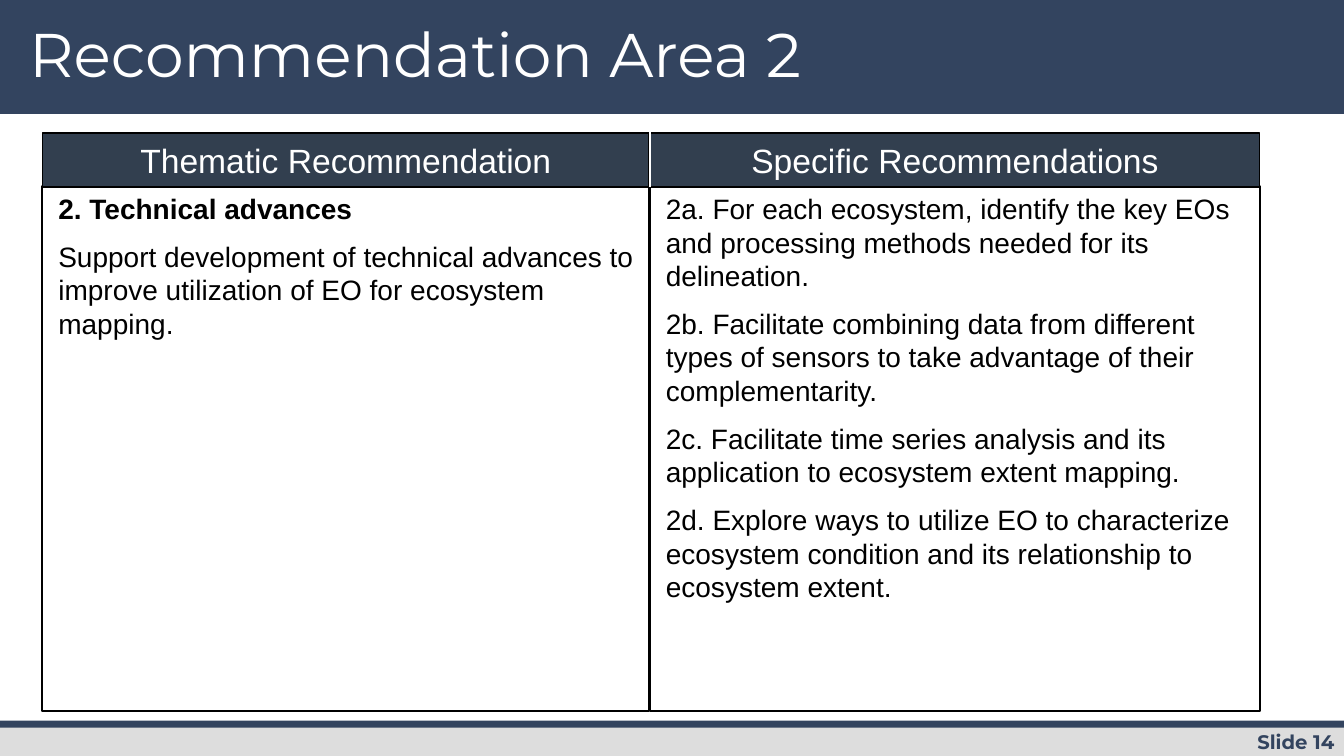
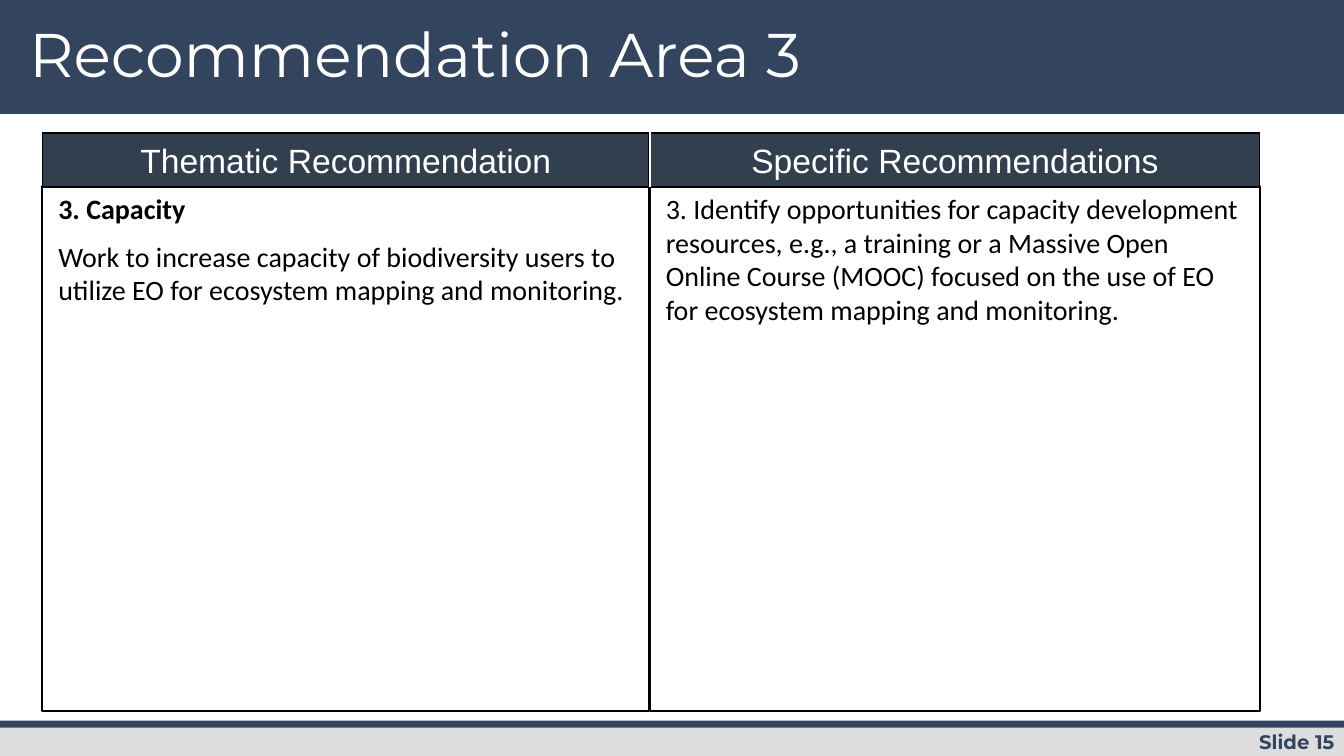
import pptx
import pptx.util
import pptx.dml.color
import pptx.enum.shapes
import pptx.enum.text
import pptx.oxml.ns
import lxml.etree

Cm = pptx.util.Cm
Pt = pptx.util.Pt
ALIGN = pptx.enum.text.PP_ALIGN
ANCHOR = pptx.enum.text.MSO_ANCHOR

COLORS = {
    "navy": "33445F",
    "header": "323F4F",
    "footer": "DDDDDD",
    "black": "000000",
    "white": "FFFFFF",
}
SLIDE_WIDTH = 33.87
HEADER_TOP, HEADER_HEIGHT = 3.35, 1.35
BODY_TOP, BODY_HEIGHT = HEADER_TOP + HEADER_HEIGHT, 13.21
COLUMNS = [
    ("Thematic Recommendation", 1.07, 15.29),
    ("Specific Recommendations", 16.38, 15.37),
]
BANDS = [
    (0, 2.87, "navy"),
    (18.26, 0.79, "footer"),
    (18.16, 0.18, "navy"),
]
AREAS = [
    {
        "title": "Recommendation Area 2",
        "number": "Slide 14",
        "font": "Arial",
        "columns": [
            [
                "2. Technical advances",
                "Support development of technical advances to improve utilization of EO for ecosystem mapping.",
            ],
            [
                "2a. For each ecosystem, identify the key EOs and processing methods needed for its delineation.",
                "2b. Facilitate combining data from different types of sensors to take advantage of their complementarity.",
                "2c. Facilitate time series analysis and its application to ecosystem extent mapping.",
                "2d. Explore ways to utilize EO to characterize ecosystem condition and its relationship to ecosystem extent.",
            ],
        ],
    },
    {
        "title": "Recommendation Area 3",
        "number": "Slide 15",
        "font": "Calibri",
        "columns": [
            [
                "3. Capacity",
                "Work to increase capacity of biodiversity users to utilize EO for ecosystem mapping and monitoring.",
            ],
            [
                "3. Identify opportunities for capacity development resources, e.g., a training or a Massive Open Online Course (MOOC) focused on the use of EO for ecosystem mapping and monitoring.",
            ],
        ],
    },
]


def add_rectangle(slide, left, top, width, height, fill=None, line_width=None):
    shape = slide.shapes.add_shape(
        pptx.enum.shapes.MSO_SHAPE.RECTANGLE, Cm(left), Cm(top), Cm(width), Cm(height)
    )
    shape.shadow.inherit = False
    if fill:
        shape.fill.solid()
        shape.fill.fore_color.rgb = pptx.dml.color.RGBColor.from_string(COLORS[fill])
    else:
        shape.fill.background()
    if line_width:
        shape.line.color.rgb = pptx.dml.color.RGBColor.from_string(COLORS["black"])
        shape.line.width = Pt(line_width)
    else:
        shape.line.fill.background()
    return shape


def format_paragraph(paragraph, font, size, color, alignment, bold=False):
    paragraph.alignment = alignment
    paragraph.font.name = font
    paragraph.font.size = Pt(size)
    paragraph.font.bold = bold
    paragraph.font.color.rgb = pptx.dml.color.RGBColor.from_string(COLORS[color])


presentation = pptx.Presentation()
presentation.slide_width = Cm(SLIDE_WIDTH)
presentation.slide_height = Cm(19.05)
layout = presentation.slide_layouts.get_by_name("Title Only")
slides = [presentation.slides.add_slide(layout) for area in AREAS]

layout_title = layout.placeholders[0]
layout_title.left, layout_title.top = Cm(0.48), Cm(0.48)
layout_title.width, layout_title.height = Cm(26.09), Cm(2.16)
layout_title.text_frame.vertical_anchor = ANCHOR.TOP
for top, height, fill in BANDS:
    band = add_rectangle(slides[0], 0, top, SLIDE_WIDTH, height, fill)
    layout_title.element.addprevious(band.element)

for slide, area in zip(slides, AREAS):
    title = slide.shapes.title
    title.text_frame.text = area["title"]
    paragraph = title.text_frame.paragraphs[0]
    paragraph.line_spacing = 0.9
    format_paragraph(paragraph, "Montserrat", 44, "white", ALIGN.LEFT)

    number = slide.shapes.add_textbox(Cm(28.52), Cm(18.26), Cm(5.36), Cm(0.86))
    number.text_frame.word_wrap = True
    number.text_frame.text = area["number"]
    format_paragraph(number.text_frame.paragraphs[0], "Montserrat", 14, "navy", ALIGN.RIGHT, True)

    for column, (heading, left, width) in enumerate(COLUMNS):
        body = add_rectangle(slide, left, BODY_TOP, width, BODY_HEIGHT, line_width=1.5)
        frame = body.text_frame
        frame.vertical_anchor = ANCHOR.TOP
        for index, text in enumerate(area["columns"][column]):
            paragraph = frame.add_paragraph() if index else frame.paragraphs[0]
            paragraph.text = text
            paragraph.line_spacing = Pt(24)
            if index:
                paragraph.space_before = Pt(10)
            paragraph._p.get_or_add_pPr().set("marL", str(Cm(0.15)))
            is_theme = column == 0 and index == 0
            format_paragraph(paragraph, area["font"], 20, "black", ALIGN.LEFT, is_theme)

        header = add_rectangle(slide, left, HEADER_TOP, width, HEADER_HEIGHT, "header", 1)
        header.text_frame.vertical_anchor = ANCHOR.MIDDLE
        header.text_frame.text = heading
        format_paragraph(header.text_frame.paragraphs[0], "Arial", 24, "white", ALIGN.CENTER)

    divider_left = Cm(COLUMNS[1][1])
    divider = slide.shapes.add_connector(
        pptx.enum.shapes.MSO_CONNECTOR.STRAIGHT, divider_left, Cm(3.3), divider_left, Cm(BODY_TOP)
    )
    divider.line.color.rgb = pptx.dml.color.RGBColor.from_string(COLORS["white"])
    divider.line.width = Pt(1)
    lxml.etree.SubElement(divider._element.spPr, pptx.oxml.ns.qn("a:effectLst"))

presentation.save("out.pptx")
